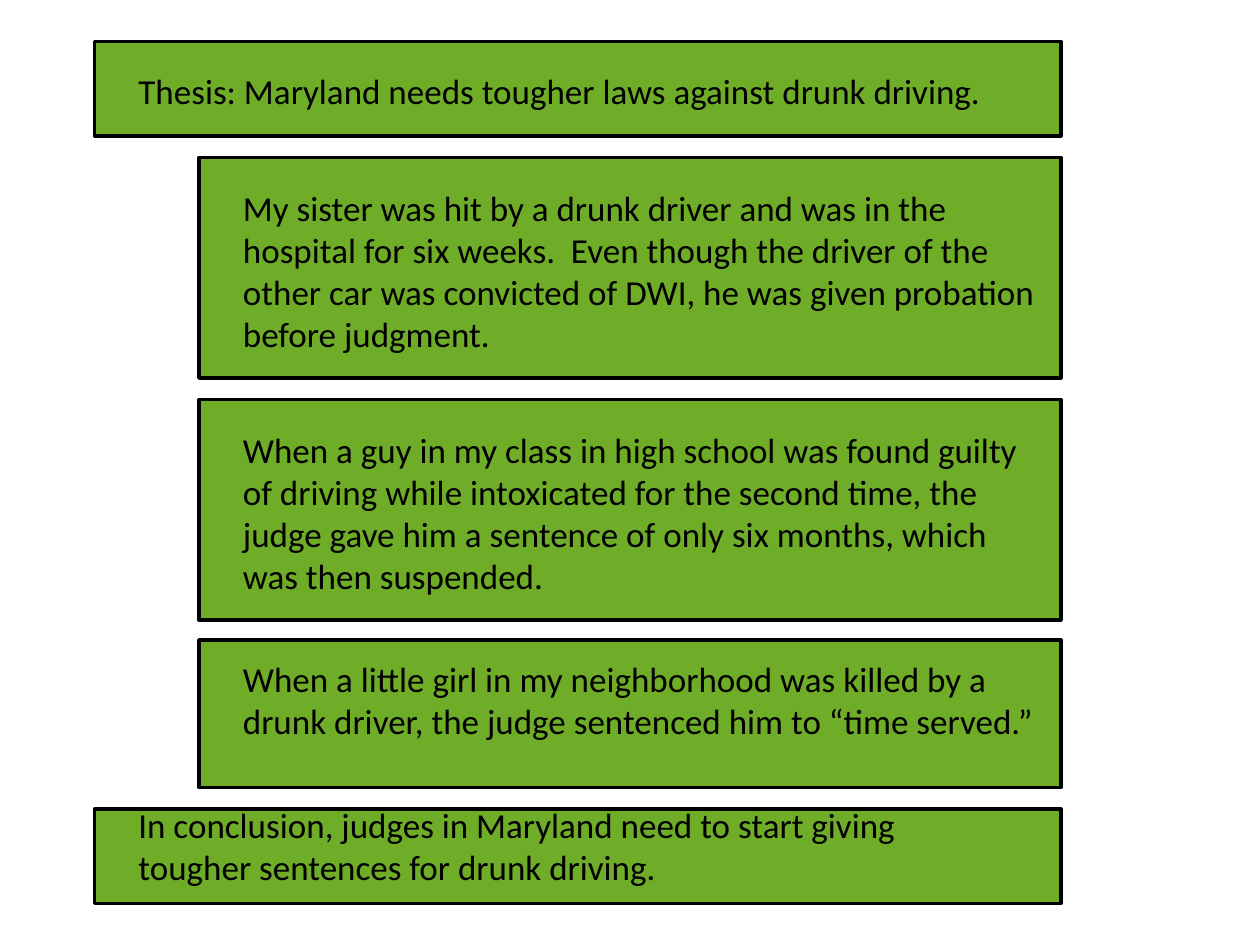
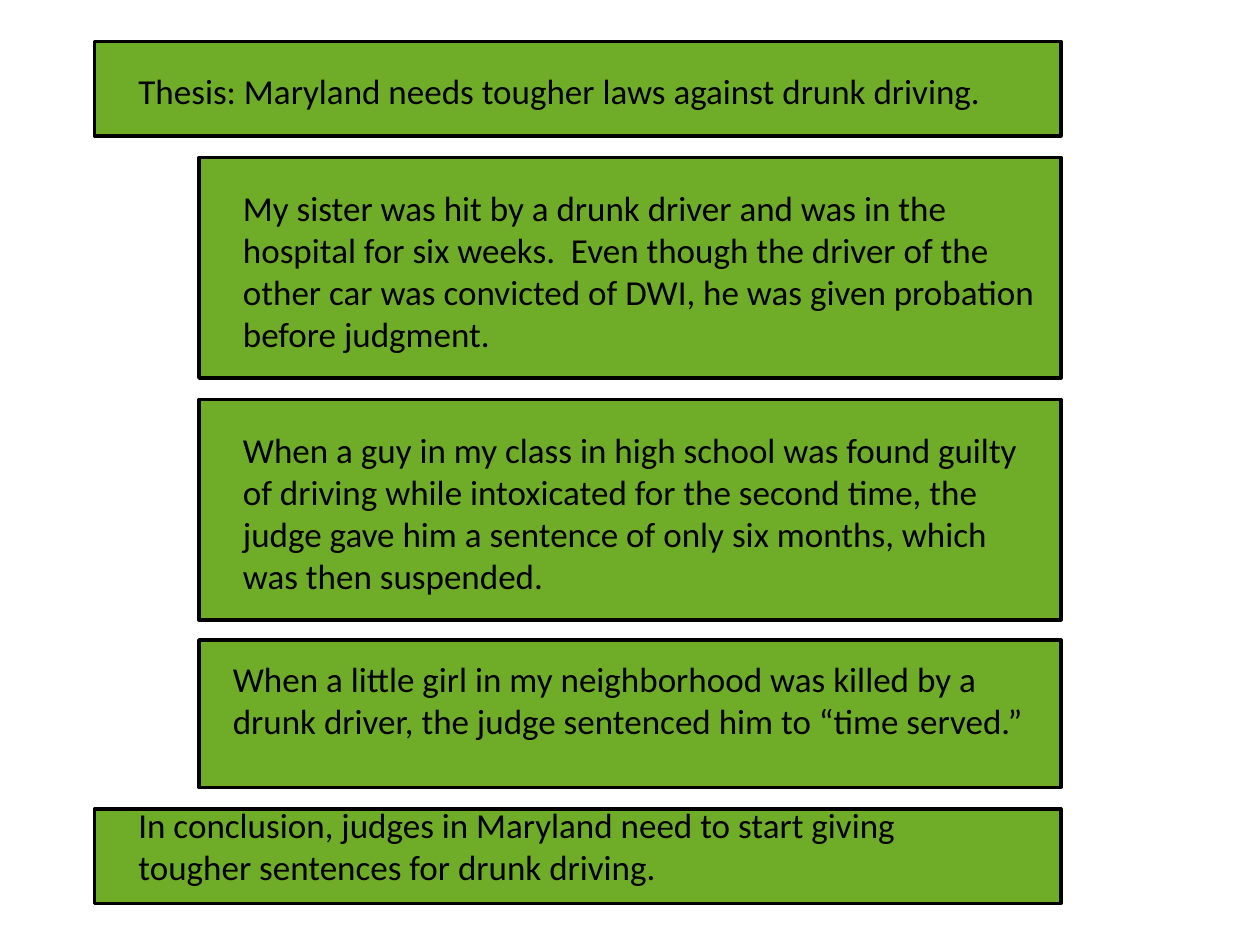
"""Build two slides that outline an argument about drunk driving laws."""
from dataclasses import dataclass

from pptx import Presentation
from pptx import util as u
from pptx.dml.color import RGBColor
from pptx.enum import shapes, text

COLORS = {"panel": "6FAC27", "ink": "000000"}
FONT = "Calibri"
RIGHT_EDGE = 8.42


@dataclass
class Panel:
    """One bordered statement; the caption offsets are relative to its corner."""
    left: float
    top: float
    height: float
    wording: str
    caption_top: float
    caption_width: float
    caption_height: float
    caption_left: float = 0.25
    caption_filled: bool = True


THESIS = Panel(0.75, 0.33, 0.75,
               "Thesis: Maryland needs tougher laws against drunk driving.",
               0.17, 7.08, 0.44)
SISTER = Panel(1.58, 1.25, 1.75,
               "My sister was hit by a drunk driver and was in the hospital for six weeks.  "
               "Even though the driver of the other car was convicted of DWI, he was given "
               "probation before judgment.",
               0.18, 6.5, 1.45)
CLASSMATE = Panel(1.58, 3.17, 1.75,
                  "When a guy in my class in high school was found guilty of driving while "
                  "intoxicated for the second time, the judge gave him a sentence of only six "
                  "months, which was then suspended.",
                  0.18, 6.5, 1.45)
NEIGHBOR = Panel(1.58, 5.08, 1.17,
                 "When a little girl in my neighborhood was killed by a drunk driver, the judge "
                 "sentenced him to “time served.”",
                 0.09, 6.5, 0.77)
CONCLUSION = Panel(0.75, 6.42, 0.75,
                   "In conclusion, judges in Maryland need to start giving tougher sentences "
                   "for drunk driving.",
                   -0.09, 7.08, 0.77, caption_filled=False)


def color(name):
    """Return a named color."""
    return RGBColor.from_string(COLORS[name])


def add_rectangle(group, bounds):
    """Add a plain green rectangle without outline or shadow."""
    box = group.shapes.add_shape(shapes.MSO_SHAPE.RECTANGLE, *bounds)
    box.shadow.inherit = False
    box.fill.solid()
    box.fill.fore_color.rgb = color("panel")
    box.line.fill.background()
    return box


def write_caption(box, wording):
    """Set left-aligned text that starts at the top of the box."""
    frame = box.text_frame
    frame.text = wording
    frame.word_wrap = True
    frame.auto_size = text.MSO_AUTO_SIZE.SHAPE_TO_FIT_TEXT
    frame.vertical_anchor = text.MSO_ANCHOR.TOP
    para = frame.paragraphs[0]
    para.alignment = text.PP_ALIGN.LEFT
    span = para.runs[0]
    span.font.name = FONT
    span.font.size = u.Pt(20)
    span.font.color.rgb = color("ink")


def add_panel(group, panel, caption_left):
    """Draw a bordered panel and its caption inside a group."""
    border = add_rectangle(group, [u.Inches(size) for size in (
        panel.left, panel.top, RIGHT_EDGE - panel.left, panel.height)])
    border.line.color.rgb = color("ink")
    border.line.width = u.Pt(2)
    bounds = [u.Inches(size) for size in (
        panel.left + caption_left, panel.top + panel.caption_top,
        panel.caption_width, panel.caption_height)]
    if panel.caption_filled:
        caption = add_rectangle(group, bounds)
    else:
        caption = group.shapes.add_textbox(*bounds)
    write_caption(caption, panel.wording)


def add_outline_slide(deck, panel_groups, neighbor_left=NEIGHBOR.caption_left):
    """Add a slide with one group shape for each list of panels."""
    page = deck.slides.add_slide(deck.slide_layouts[6])
    for panels in panel_groups:
        group = page.shapes.add_group_shape()
        for panel in panels:
            add_panel(group, panel,
                      neighbor_left if panel is NEIGHBOR else panel.caption_left)


def main():
    """Build and save the deck."""
    deck = Presentation()
    deck.slide_width, deck.slide_height = u.Inches(10), u.Inches(7.5)
    add_outline_slide(deck, [[THESIS], [CLASSMATE], [SISTER], [NEIGHBOR], [CONCLUSION]])
    add_outline_slide(deck, [[THESIS], [CONCLUSION], [CLASSMATE, SISTER, NEIGHBOR]],
                      neighbor_left=0.17)
    deck.save("out.pptx")


if __name__ == "__main__":
    main()
